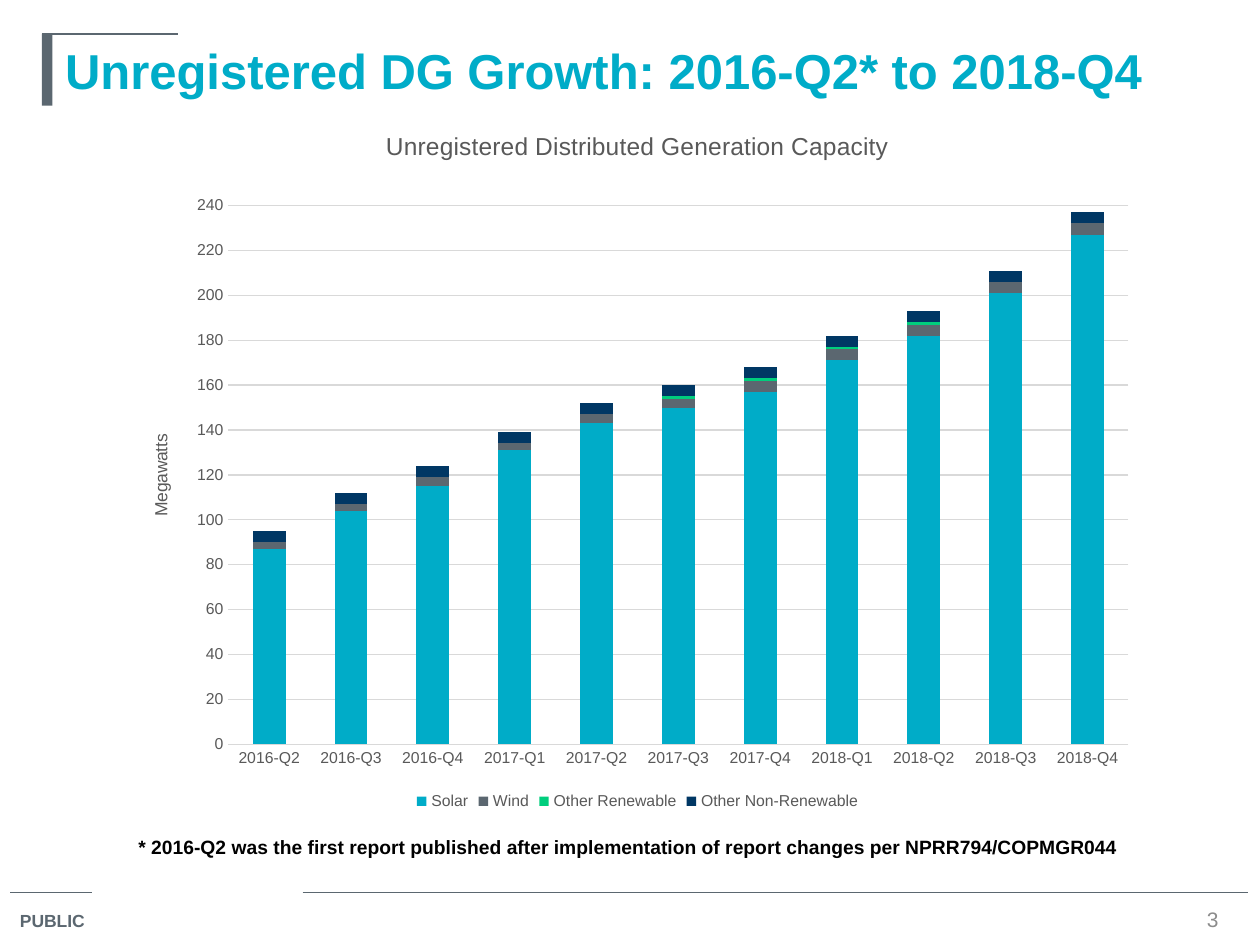
"""Build the slide on growth of unregistered distributed generation."""
from lxml import etree
from pptx import Presentation
from pptx.chart.data import CategoryChartData
from pptx.dml.color import RGBColor
from pptx.enum.chart import XL_CHART_TYPE, XL_LEGEND_POSITION, XL_TICK_MARK
from pptx.enum.shapes import MSO_CONNECTOR, MSO_SHAPE
from pptx.enum.text import MSO_ANCHOR, PP_ALIGN
from pptx.oxml import parse_xml
from pptx.oxml.ns import nsdecls, qn
from pptx.util import Pt

STACKED = XL_CHART_TYPE.COLUMN_STACKED
BOTTOM = XL_LEGEND_POSITION.BOTTOM
NO_TICK = XL_TICK_MARK.NONE
STRAIGHT = MSO_CONNECTOR.STRAIGHT
RECT = MSO_SHAPE.RECTANGLE
TOP, MIDDLE = MSO_ANCHOR.TOP, MSO_ANCHOR.MIDDLE
LEFT, CENTER = PP_ALIGN.LEFT, PP_ALIGN.CENTER

TITLE = "Unregistered DG Growth: 2016-Q2* to 2018-Q4"
NOTE = ("* 2016-Q2 was the first report published after implementation "
        "of report changes per NPRR794/COPMGR044")
HEAD = "Unregistered Distributed Generation Capacity"
UNIT = "Megawatts"
CATS = ["2016-Q2", "2016-Q3", "2016-Q4", "2017-Q1", "2017-Q2", "2017-Q3",
        "2017-Q4", "2018-Q1", "2018-Q2", "2018-Q3", "2018-Q4"]
SERIES = [
    ("Solar", "teal", [87, 104, 115, 131, 143, 150, 157, 171, 182, 201, 227]),
    ("Wind", "slate", [3, 3, 4, 3, 4, 4, 5, 5, 5, 5, 5]),
    ("Other Renewable", "green", [0, 0, 0, 0, 0, 1, 1, 1, 1, 0, 0]),
    ("Other Non-Renewable", "navy", [5] * len(CATS)),
]
RULES = [(6, 510, 52.5), (173, 510, 713), (24, 19.4, 102)]
PLOT = {"x": 0.1, "y": 0.11, "w": 0.88, "h": 0.79}

THEME = {
    "font": "Arial",
    "color": {"teal": "00ACC8", "slate": "5B6770", "green": "00CE7D",
              "navy": "003764", "black": "000000", "page": "8C8C8C",
              "label": "595959", "grid": "D9D9D9"},
    "size": {"title": 28, "head": 14, "page": 12, "note": 11,
             "tag": 10, "unit": 10, "label": 9},
}


def tint(name):
    return RGBColor.from_string(THEME["color"][name])


def style(font, size, color, bold=False):
    font.name = THEME["font"]
    font.size = Pt(THEME["size"][size])
    font.color.rgb = tint(color)
    font.bold = bold


def write(frame, text, size, color, bold=False, align=LEFT, anchor=TOP):
    frame.word_wrap = True
    frame.vertical_anchor = anchor
    frame.text = text
    para = frame.paragraphs[0]
    para.alignment = align
    style(para.runs[0].font, size, color, bold)


def add_text(slide, box, *args, **opts):
    shape = slide.shapes.add_textbox(*map(Pt, box))
    write(shape.text_frame, *args, **opts)


def add_rule(slide, left, top, right):
    rule = slide.shapes.add_connector(STRAIGHT, Pt(left), Pt(top), Pt(right), Pt(top))
    rule.line.color.rgb = tint("slate")
    rule.line.width = Pt(0.75)
    etree.SubElement(rule.element.spPr, qn("a:effectLst"))


def place_plot(chart):
    area = chart.element.find(".//" + qn("c:plotArea"))
    for old in area.findall(qn("c:layout")):
        area.remove(old)
    modes = '<c:layoutTarget val="inner"/><c:xMode val="edge"/><c:yMode val="edge"/>'
    sizes = "".join(f'<c:{key} val="{val}"/>' for key, val in PLOT.items())
    area.insert(0, parse_xml(
        f'<c:layout {nsdecls("c")}><c:manualLayout>{modes}{sizes}'
        "</c:manualLayout></c:layout>"))


def add_chart(slide, box):
    data = CategoryChartData(number_format="0")
    data.categories = CATS
    for name, _, vals in SERIES:
        data.add_series(name, vals)
    chart = slide.shapes.add_chart(STACKED, *map(Pt, box), data).chart
    style(chart.font, "label", "label")

    chart.has_title = True
    write(chart.chart_title.text_frame, HEAD, "head", "label", align=CENTER)
    chart.chart_title.include_in_layout = False
    chart.has_legend = True
    chart.legend.position = BOTTOM
    chart.legend.include_in_layout = False
    style(chart.legend.font, "label", "label")

    plot = chart.plots[0]
    plot.gap_width, plot.overlap = 150, 100
    plot.vary_by_categories = False
    for series, (_, color, _) in zip(plot.series, SERIES):
        series.format.fill.solid()
        series.format.fill.fore_color.rgb = tint(color)

    cat, val = chart.category_axis, chart.value_axis
    for axis in (cat, val):
        axis.major_tick_mark = axis.minor_tick_mark = NO_TICK
        style(axis.tick_labels.font, "label", "label")
    val.minimum_scale, val.maximum_scale, val.major_unit = 0, 250, 20
    val.has_major_gridlines = True
    val.format.line.fill.background()
    for line in (cat.format.line, val.major_gridlines.format.line):
        line.color.rgb = tint("grid")
        line.width = Pt(0.75)
    val.has_title = True
    write(val.axis_title.text_frame, UNIT, "unit", "label", align=CENTER)
    place_plot(chart)


def main():
    deck = Presentation()
    deck.slide_width, deck.slide_height = Pt(720), Pt(540)
    slide = deck.slides.add_slide(deck.slide_layouts[5])

    for rule in RULES:
        add_rule(slide, *rule)
    bar = slide.shapes.add_shape(RECT, Pt(24), Pt(19.4), Pt(6), Pt(41))
    bar.shadow.inherit = False
    bar.fill.solid()
    bar.fill.fore_color.rgb = tint("slate")
    bar.line.fill.background()

    title = slide.shapes.title
    title.left, title.top, title.width, title.height = map(Pt, (30, 19.4, 666, 41))
    write(title.text_frame, TITLE, "title", "teal", bold=True, anchor=MIDDLE)

    add_chart(slide, (72, 60, 584.6, 406))
    add_text(slide, (72, 474, 582, 21), NOTE, "note", "black", bold=True)
    add_text(slide, (4.3, 516.5, 56, 20), "PUBLIC", "tag", "slate", bold=True)
    add_text(slide, (672, 517, 42, 17), "3", "page", "page",
             align=CENTER, anchor=MIDDLE)
    deck.save("out.pptx")


if __name__ == "__main__":
    main()
